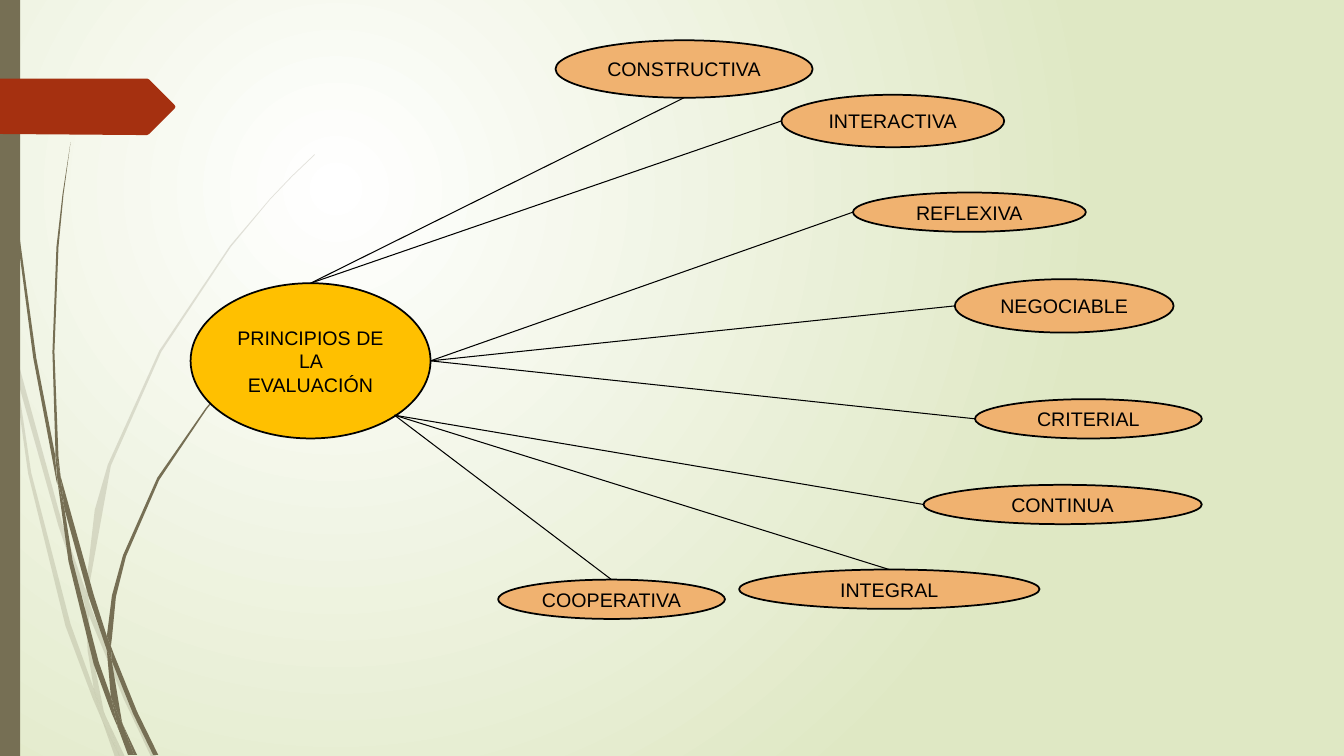
from dataclasses import dataclass
from typing import Optional

from lxml import etree
from pptx import Presentation
from pptx.dml.color import RGBColor
from pptx.enum.shapes import MSO_CONNECTOR, MSO_SHAPE
from pptx.enum.text import MSO_ANCHOR, PP_ALIGN
from pptx.oxml.ns import qn
from pptx.shapes.autoshape import Shape
from pptx.shapes.shapetree import SlideShapes
from pptx.slide import Slide
from pptx.util import Inches, Pt

ELLIPSE = MSO_SHAPE.OVAL
RECTANGLE = MSO_SHAPE.RECTANGLE
STRAIGHT = MSO_CONNECTOR.STRAIGHT
CENTER = PP_ALIGN.CENTER
MIDDLE = MSO_ANCHOR.MIDDLE

Outline = list[tuple[float, float]]


@dataclass(frozen=True)
class Theme:
    glow: RGBColor = RGBColor(0xFF, 0xFF, 0xFF)
    sage: RGBColor = RGBColor(0xDF, 0xE8, 0xC4)
    olive: RGBColor = RGBColor(0x76, 0x6F, 0x54)
    rust: RGBColor = RGBColor(0xA5, 0x30, 0x10)
    gold: RGBColor = RGBColor(0xFF, 0xC0, 0x00)
    peach: RGBColor = RGBColor(0xF0, 0xB2, 0x70)
    ink: RGBColor = RGBColor(0, 0, 0)
    font: str = "Arial"
    label_size: Pt = Pt(14)
    border: Pt = Pt(1.25)
    link: Pt = Pt(0.75)


@dataclass(frozen=True)
class Anchor:
    across: float
    down: float
    site: Optional[int] = None


TOP = Anchor(0.5, 0, 0)
LEFT = Anchor(0, 0.5, 2)
RIGHT = Anchor(1, 0.5)
BOTTOM = Anchor(0.5, 1)
LOWER_RIGHT = Anchor(0.85, 0.85)


@dataclass(frozen=True)
class Bubble:
    text: str
    left: float
    top: float
    width: float
    height: float


@dataclass(frozen=True)
class Principle:
    bubble: Bubble
    leaves_hub: Anchor
    arrives: Anchor


THEME = Theme()
HUB = Bubble("PRINCIPIOS DE LA EVALUACIÓN", 1.89, 2.81, 2.38, 1.54)
PRINCIPLES = [
    Principle(Bubble("CONSTRUCTIVA", 5.51, 0.4, 2.55, 0.57), TOP, BOTTOM),
    Principle(Bubble("INTERACTIVA", 7.75, 0.94, 2.21, 0.52), TOP, LEFT),
    Principle(Bubble("REFLEXIVA", 8.46, 1.91, 2.31, 0.39), RIGHT, LEFT),
    Principle(Bubble("NEGOCIABLE", 9.47, 2.77, 2.17, 0.53), RIGHT, LEFT),
    Principle(Bubble("CRITERIAL", 9.67, 3.96, 2.25, 0.39), RIGHT, LEFT),
    Principle(Bubble("CONTINUA", 9.16, 4.81, 2.76, 0.39), LOWER_RIGHT, LEFT),
    Principle(Bubble("INTEGRAL", 7.33, 5.65, 2.98, 0.39), LOWER_RIGHT, TOP),
    Principle(Bubble("COOPERATIVA", 4.94, 5.75, 2.25, 0.39), LOWER_RIGHT, TOP),
]

PALE_GRASS: list[Outline] = [
    [(0.11, 3.5), (0.09, 3.22), (0, 2.82), (0, 2.99), (0.1, 3.44)],
    [(0.58, 5.22), (0.84, 5.99), (0.85, 5.86), (0.62, 5.2), (0.14, 3.45), (0.17, 3.76)],
    [(0.92, 6.07), (0.88, 5.96), (0.88, 6.1), (1.23, 6.94), (1.5, 7.51), (1.55, 7.51), (1.27, 6.92)],
    [(1.19, 7.51), (1.24, 7.51), (1.05, 7.11)],
    [(0.93, 6.83), (0.7, 6.19), (0.31, 4.69), (0.17, 3.76), (0.11, 3.5), (0.28, 4.7),
     (0.65, 6.21), (0.92, 6.93), (1.01, 7.14), (0.99, 7.07)],
    [(0.84, 5.99), (0.87, 6.46), (0.93, 6.83), (0.96, 6.92), (1.05, 7.11), (1.03, 7.06),
     (0.91, 6.46), (0.88, 6.1), (0.88, 6.08)],
    [(0.88, 5.84), (1.1, 4.62), (1.6, 3.49), (2.29, 2.45), (2.68, 1.98), (2.9, 1.75), (3.12, 1.54),
     (3.12, 1.53), (2.89, 1.75), (2.68, 1.97), (2.28, 2.44), (1.58, 3.48), (1.07, 4.61),
     (0.94, 5.06), (0.85, 5.84), (0.85, 5.86), (0.88, 5.96)],
    [(1.01, 7.14), (1.14, 7.51), (1.19, 7.51)],
    [(0.88, 6.08), (0.88, 6.1), (0.88, 5.96), (0.85, 5.86), (0.84, 5.99)],
    [(0.96, 6.92), (0.93, 6.83), (0.99, 7.07), (1.01, 7.14), (1.19, 7.51), (1.05, 7.11)],
]
DARK_GRASS: list[Outline] = [
    [(0.07, 1.1), (0.17, 2.33), (0.33, 3.55), (0.56, 4.77), (0.57, 4.81), (0.55, 4.57), (0.55, 4.53),
     (0.36, 3.55), (0.19, 2.32), (0.08, 1.09), (0.05, 0.48), (0.04, 0), (0.03, 0), (0.04, 0.48)],
    [(0.88, 5.92), (1.06, 6.45), (1.06, 6.33), (1.06, 6.31), (0.93, 5.9), (0.6, 4.72), (0.64, 5.05)],
    [(1.13, 6.49), (1.1, 6.41), (1.11, 6.56), (1.32, 7.08), (1.52, 7.49), (1.57, 7.49), (1.36, 7.06)],
    [(1.1, 6.91), (0.98, 6.57), (0.72, 5.56), (0.64, 5.05), (0.57, 4.77), (0.68, 5.57),
     (0.93, 6.59), (1.11, 7.08), (1.17, 7.22), (1.16, 7.17)],
    [(0.6, 4.72), (0.58, 4.53), (0.54, 3.49), (0.58, 2.45), (0.63, 1.93), (0.7, 1.41),
     (0.62, 1.93), (0.56, 2.45), (0.52, 3.49), (0.55, 4.49)],
    [(1.33, 7.49), (1.36, 7.49), (1.22, 7.19)],
    [(0.57, 4.77), (0.64, 5.05), (0.6, 4.72), (0.55, 4.49), (0.55, 4.53)],
    [(1.11, 6.33), (1.15, 5.92), (1.25, 5.52), (1.58, 4.76), (2.05, 4.06), (2.31, 3.74), (2.45, 3.59),
     (2.61, 3.44), (2.6, 3.44), (2.45, 3.58), (2.31, 3.73), (2.04, 4.05), (1.56, 4.74),
     (1.22, 5.51), (1.11, 5.91), (1.06, 6.31), (1.1, 6.41)],
    [(1.17, 7.22), (1.27, 7.49), (1.31, 7.49)],
    [(1.06, 6.45), (1.1, 6.91), (1.16, 7.06), (1.22, 7.19), (1.21, 7.16), (1.11, 6.56), (1.09, 6.51)],
    [(1.06, 6.45), (1.09, 6.51), (1.11, 6.56), (1.1, 6.41), (1.06, 6.31), (1.06, 6.33)],
    [(1.16, 7.06), (1.1, 6.91), (1.16, 7.17), (1.17, 7.22), (1.3, 7.49), (1.33, 7.49), (1.22, 7.19)],
]
ARROW_TAG: Outline = [(1.73, 1.08), (1.48, 1.33), (1.46, 1.34), (1.36, 1.34), (0, 1.33),
                      (0, 0.78), (1.46, 0.78), (1.48, 0.79), (1.73, 1.04), (1.74, 1.06)]


def paint_background(slide: Slide) -> None:
    fill = slide.background.fill
    fill.gradient()
    for stop, color in zip(fill.gradient_stops, (THEME.glow, THEME.sage)):
        stop.color.rgb = color
    gradient = slide.element.find(".//" + qn("a:gradFill"))
    linear = gradient.find(qn("a:lin"))
    radial = etree.Element(qn("a:path"), {"path": "circle"})
    etree.SubElement(radial, qn("a:fillToRect"), l="50000", t="50000", r="100000", b="100000")
    gradient.replace(linear, radial)


def paint(shape: Shape, color: RGBColor) -> None:
    shape.shadow.inherit = False
    shape.fill.solid()
    shape.fill.fore_color.rgb = color
    shape.line.fill.background()


def draw_outline(shapes: SlideShapes, outline: Outline, color: RGBColor) -> Shape:
    points = [(Inches(x), Inches(y)) for x, y in outline]
    builder = shapes.build_freeform(*points[0])
    builder.add_line_segments(points[1:], close=True)
    shape = builder.convert_to_shape()
    paint(shape, color)
    return shape


def draw_grass(slide: Slide, blades: list[Outline], opacity: int) -> None:
    tuft = slide.shapes.add_group_shape()
    for blade in blades:
        shape = draw_outline(tuft.shapes, blade, THEME.olive)
        if opacity < 100:
            color = shape.element.spPr.find(qn("a:solidFill"))[0]
            etree.SubElement(color, qn("a:alpha"), val=str(opacity * 1000))


def draw_bubble(slide: Slide, bubble: Bubble, color: RGBColor) -> Shape:
    box = map(Inches, (bubble.left, bubble.top, bubble.width, bubble.height))
    oval = slide.shapes.add_shape(ELLIPSE, *box)
    paint(oval, color)
    oval.line.color.rgb = THEME.ink
    oval.line.width = THEME.border
    oval.text_frame.vertical_anchor = MIDDLE
    label = oval.text_frame.paragraphs[0]
    label.text = bubble.text
    label.alignment = CENTER
    label.font.name = THEME.font
    label.font.size = THEME.label_size
    label.font.color.rgb = THEME.ink
    return oval


def locate(oval: Shape, anchor: Anchor) -> tuple[int, int]:
    return (round(oval.left + oval.width * anchor.across),
            round(oval.top + oval.height * anchor.down))


def draw_link(slide: Slide, hub: Shape, oval: Shape, principle: Principle) -> None:
    start = locate(hub, principle.leaves_hub)
    end = locate(oval, principle.arrives)
    link = slide.shapes.add_connector(STRAIGHT, *start, *end)
    if principle.leaves_hub.site is not None:
        link.begin_connect(hub, principle.leaves_hub.site)
    if principle.arrives.site is not None:
        link.end_connect(oval, principle.arrives.site)
    link.begin_x, link.begin_y = start
    link.end_x, link.end_y = end
    link.line.color.rgb = THEME.ink
    link.line.width = THEME.link
    etree.SubElement(link.element.spPr, qn("a:effectLst"))


def main() -> None:
    deck = Presentation()
    deck.slide_width, deck.slide_height = Inches(13.33), Inches(7.5)
    slide = deck.slides.add_slide(deck.slide_layouts[6])
    paint_background(slide)
    draw_grass(slide, PALE_GRASS, 20)
    draw_grass(slide, DARK_GRASS, 100)
    side_band = slide.shapes.add_shape(RECTANGLE, 0, 0, Inches(0.2), deck.slide_height)
    paint(side_band, THEME.olive)
    draw_outline(slide.shapes, ARROW_TAG, THEME.rust)
    hub = draw_bubble(slide, HUB, THEME.gold)
    ovals = [draw_bubble(slide, principle.bubble, THEME.peach) for principle in PRINCIPLES]
    for oval, principle in zip(ovals, PRINCIPLES):
        draw_link(slide, hub, oval, principle)
    deck.save("out.pptx")


if __name__ == "__main__":
    main()
